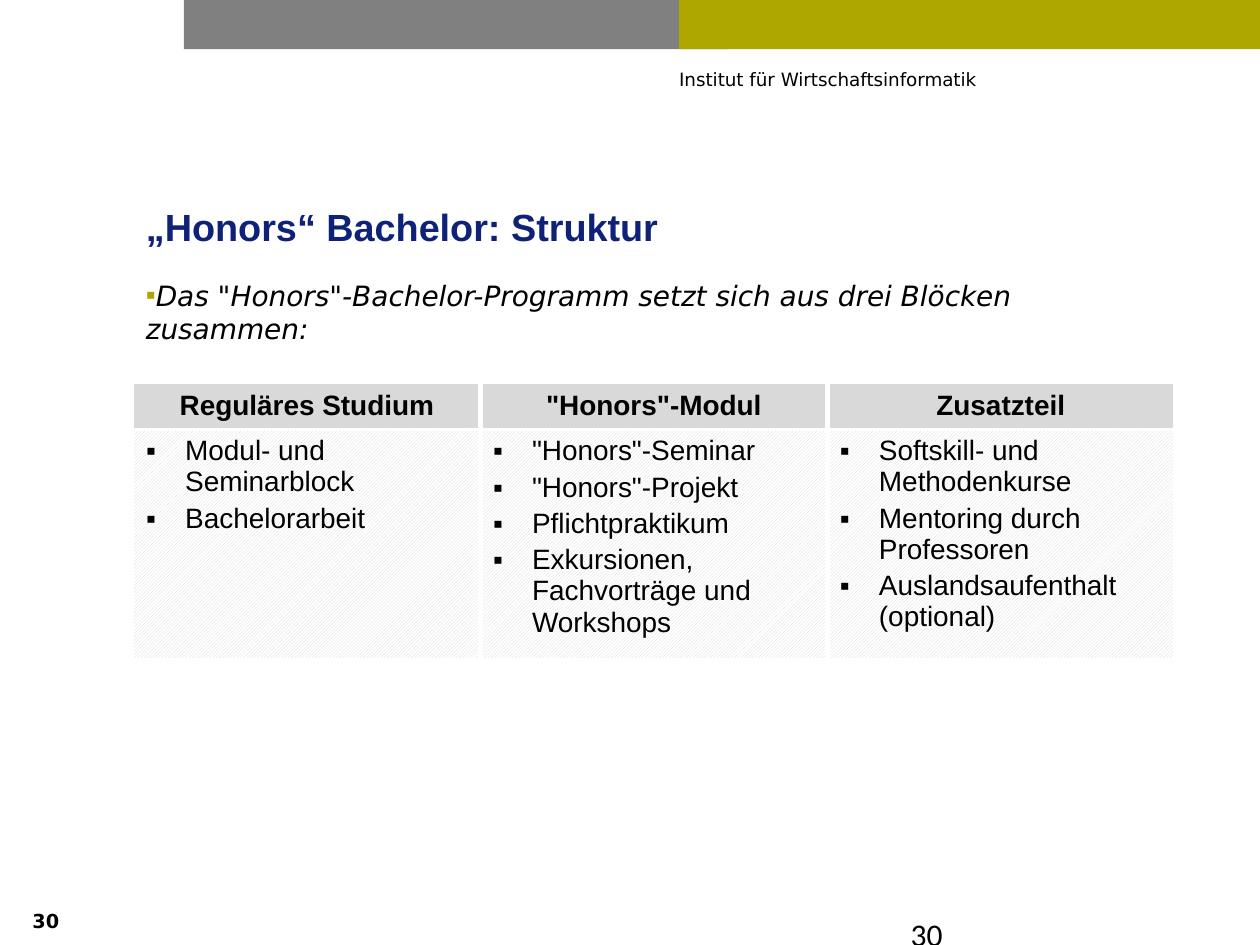
from lxml import etree
from pptx import Presentation
from pptx import util as u
from pptx.dml.color import RGBColor
from pptx.enum import dml, shapes, text
from pptx.oxml.ns import qn

COLORS = {"gray": "808080", "olive": "AEA700", "navy": "0F2278",
          "black": "000000", "white": "FFFFFF", "pale": "D9D9D9"}
SANS, ARIAL = "DejaVu Sans", "Arial"
LEFT, WIDE = 10.6, 82.6

BLOCKS = {
    "Reguläres Studium": ["Modul- und Seminarblock", "Bachelorarbeit"],
    '"Honors"-Modul': ['"Honors"-Seminar', '"Honors"-Projekt', "Pflichtpraktikum",
                       "Exkursionen, Fachvorträge und Workshops"],
    "Zusatzteil": ["Softskill- und Methodenkurse", "Mentoring durch Professoren",
                   "Auslandsaufenthalt (optional)"],
}


def color(name):
    return RGBColor.from_string(COLORS[name])


def grid(*cells):
    """Turn steps of a grid of 100 columns by 75 rows into lengths."""
    return [u.Inches(n / 10) for n in cells]


class Page:
    def __init__(self, slide):
        self.slide = slide

    def style(self, par, size, face=ARIAL, tint="black", bold=False, slant=False):
        font = par.font
        font.size, font.name = u.Pt(size), face
        font.bold, font.italic = bold, slant
        font.color.rgb = color(tint)

    def bullet(self, par, tint, hang=0):
        props = par._p.get_or_add_pPr()
        indent = u.Inches(hang)
        props.set("marL", str(indent))
        props.set("indent", str(-indent))
        shade = etree.SubElement(props, qn("a:buClr"))
        etree.SubElement(shade, qn("a:srgbClr"), val=COLORS[tint])
        etree.SubElement(props, qn("a:buFont"), typeface=ARIAL)
        etree.SubElement(props, qn("a:buChar"), char="▪")

    def bar(self, place, tint):
        box = self.slide.shapes.add_shape(shapes.MSO_SHAPE.RECTANGLE, *grid(*place))
        box.shadow.inherit = False
        box.fill.solid()
        box.fill.fore_color.rgb = color(tint)
        box.line.fill.background()

    def label(self, place, words, size, inset=True, middle=False, lead=None,
              mark=None, **look):
        frame = self.slide.shapes.add_textbox(*grid(*place)).text_frame
        frame.word_wrap = True
        if not inset:
            frame.margin_left = frame.margin_right = 0
            frame.margin_top = frame.margin_bottom = 0
        if middle:
            frame.vertical_anchor = text.MSO_ANCHOR.MIDDLE
        par = frame.paragraphs[0]
        par.text = words
        if lead:
            par.line_spacing = u.Pt(lead)
        if mark:
            self.bullet(par, mark)
        self.style(par, size, **look)

    def edge(self, cell, side, width):
        line = etree.SubElement(cell._tc.get_or_add_tcPr(), qn("a:ln" + side),
                                w=str(u.Pt(width)))
        fill = etree.SubElement(line, qn("a:solidFill"))
        etree.SubElement(fill, qn("a:srgbClr"), val=COLORS["white"])

    def head(self, cell, words):
        cell.fill.solid()
        cell.fill.fore_color.rgb = color("pale")
        cell.vertical_anchor = text.MSO_ANCHOR.MIDDLE
        par = cell.text_frame.paragraphs[0]
        par.text = words
        par.alignment = text.PP_ALIGN.CENTER
        self.style(par, 16, bold=True)

    def items(self, cell, lines):
        cell.fill.patterned()
        cell.fill.pattern = dml.MSO_PATTERN.LIGHT_UPWARD_DIAGONAL
        cell.fill.fore_color.rgb = color("pale")
        cell.fill.back_color.rgb = color("white")
        frame = cell.text_frame
        frame.text = "\n".join(lines)
        for par in frame.paragraphs:
            par.space_after = u.Pt(3)
            self.bullet(par, "black", 0.31)
            self.style(par, 16)

    def table(self, place, blocks, rows):
        last = len(blocks) - 1
        table = self.slide.shapes.add_table(len(rows), len(blocks), *grid(*place)).table
        for row, height in zip(table.rows, grid(*rows)):
            row.height = height
        for col, (title, lines) in enumerate(blocks.items()):
            top, body = table.cell(0, col), table.cell(1, col)
            for cell in (top, body):
                if col > 0:
                    self.edge(cell, "L", 3)
                if col < last:
                    self.edge(cell, "R", 3)
            self.edge(top, "B", 2.25)
            self.edge(body, "T", 2.25)
            self.head(top, title)
            self.items(body, lines)


def main():
    deck = Presentation()
    deck.slide_width, deck.slide_height = grid(100, 75)
    page = Page(deck.slides.add_slide(deck.slide_layouts[6]))
    page.bar((14.6, 0, 43.2, 3.9), "gray")
    page.bar((53.9, 0, 46.1, 3.9), "olive")
    page.label((53.9, 5.5, 45.3, 3.9), "Institut für Wirtschaftsinformatik", 10.5,
               inset=False, lead=12, face=SANS)
    page.label((1.6, 71.7, 7, 2.9), "30", 11, face=SANS, bold=True)
    page.label((LEFT, 15.7, WIDE, 4.5), "„Honors“ Bachelor: Struktur", 21.6,
               middle=True, tint="navy", bold=True)
    page.label((LEFT, 21.6, WIDE, 50.5),
               'Das "Honors"-Bachelor-Programm setzt sich aus drei Blöcken zusammen:',
               16, mark="olive", face=SANS, slant=True)
    page.label((71.3, 72.1, 23.3, 4), "30", 18, face="Calibri")
    page.table((LEFT, 30.4, WIDE, 20.6), BLOCKS, (3.5, 17.1))
    deck.save("out.pptx")


if __name__ == "__main__":
    main()
